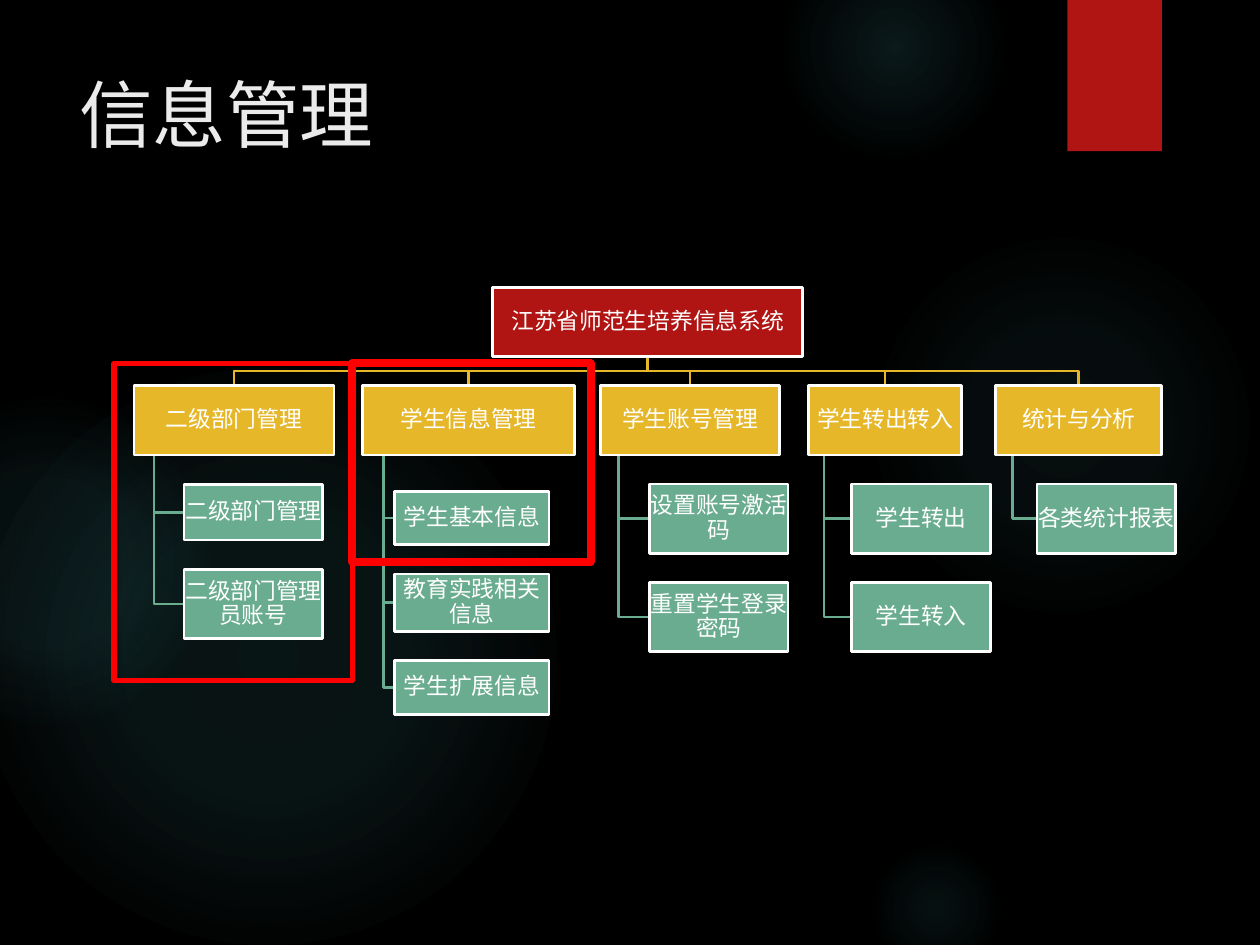
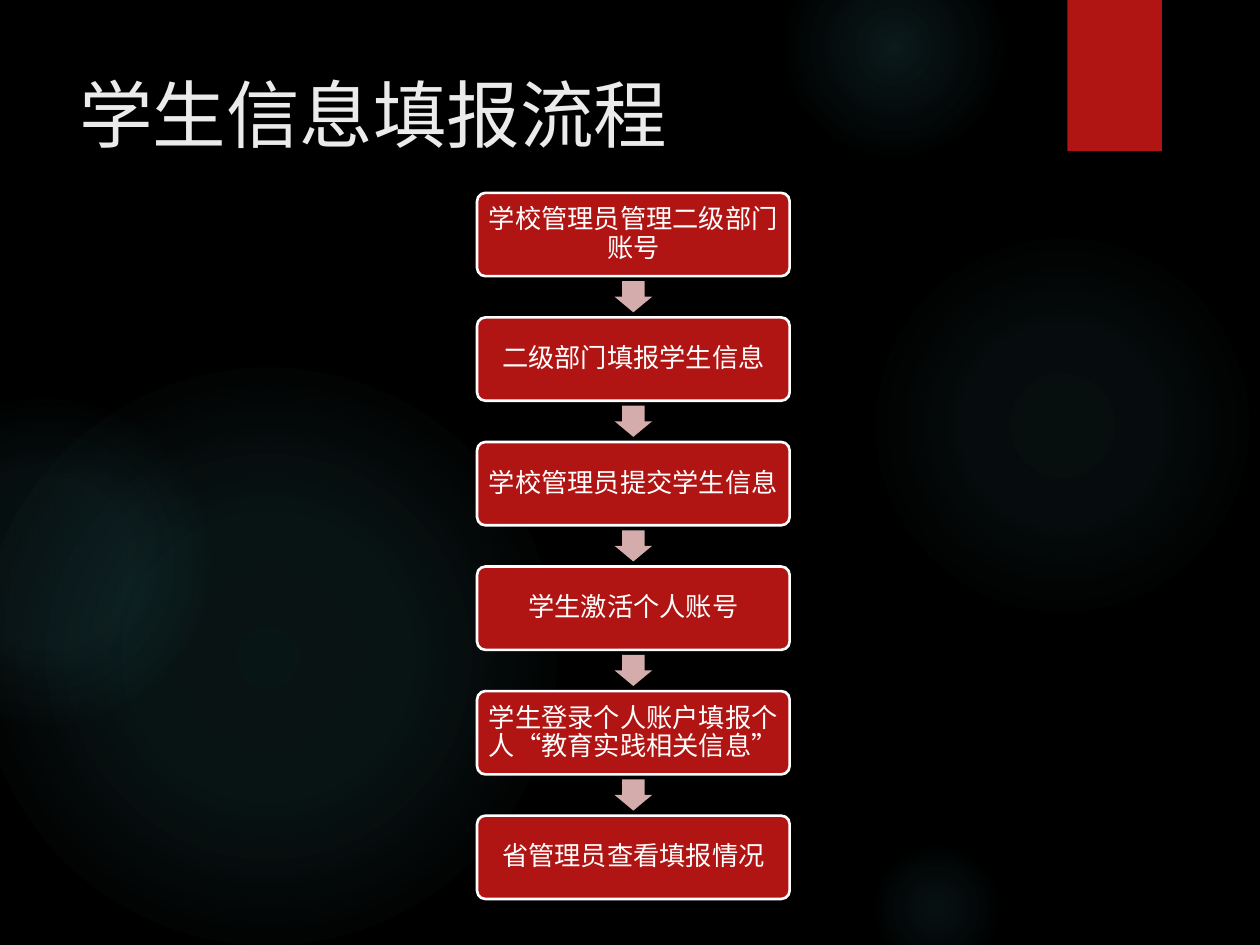
from dataclasses import dataclass

from pptx import Presentation
from pptx.dml.color import RGBColor
from pptx.enum.shapes import MSO_SHAPE as Shape
from pptx.enum.text import MSO_ANCHOR as Anchor, PP_ALIGN as Align
from pptx.oxml import parse_xml
from pptx.oxml.ns import nsdecls
from pptx.util import Pt

FONT = "League Spartan"
COLORS = {
    "black": "000000",
    "white": "FFFFFF",
    "title": "EBEBEB",
    "red": "B01513",
    "gold": "E6B729",
    "green": "6AAC90",
    "pink": "D4ACAB",
    "marker": "FF0000",
    "glow": "50B9C1",
}

# left, top, diameter, gradient stops as (position %, opacity %)
GLOWS = [
    (496, 132, 222, [(0, 7), (36, 6), (69, 0)]),
    (448, -36, 126, [(0, 14), (36, 7), (73, 0)]),
    (496, 480, 78, [(0, 9), (36, 5), (66, 0)]),
    (-12, 210, 330, [(0, 11), (36, 10), (75, 0)]),
    (-66, 228, 186, [(0, 8), (36, 8), (72, 0)]),
]

LEVEL_GAP = 16.6
BOX_HEIGHT = 39.6


@dataclass
class Branch:
    name: str
    left: float
    width: float
    indent: float
    children: list  # (name, height)
    child_width: float = 79.2
    first_gap: float = LEVEL_GAP


SYSTEM = "江苏省师范生培养信息系统"
BRANCHES = [
    Branch("二级部门管理", 0, 114.2, 28.6,
           [("二级部门管理", 31.8), ("二级部门管理员账号", BOX_HEIGHT)], first_gap=16.9),
    Branch("学生信息管理", 130.4, 121.4, 18.5,
           [("学生基本信息", 30.4), ("教育实践相关信息", 32.9), ("学生扩展信息", 30.8)],
           child_width=88.2, first_gap=20.9),
    Branch("学生账号管理", 266.5, 102.5, 28.1,
           [("设置账号激活码", BOX_HEIGHT), ("重置学生登录密码", BOX_HEIGHT)]),
    Branch("学生转出转入", 385.5, 87.3, 24.6,
           [("学生转出", BOX_HEIGHT), ("学生转入", BOX_HEIGHT)]),
    Branch("统计与分析", 492.3, 95, 23.7, [("各类统计报表", BOX_HEIGHT)]),
]

STEPS = [
    "学校管理员管理二级部门账号",
    "二级部门填报学生信息",
    "学校管理员提交学生信息",
    "学生激活个人账号",
    "学生登录个人账户填报个人“教育实践相关信息”",
    "省管理员查看填报情况",
]


def color(name):
    return RGBColor.from_string(COLORS[name])


def style_shape(shape, fill=None, line=None, weight=1.5):
    shape.shadow.inherit = False
    if fill:
        shape.fill.solid()
        shape.fill.fore_color.rgb = color(fill)
    else:
        shape.fill.background()
    if line:
        shape.line.color.rgb = color(line)
        shape.line.width = Pt(weight)
    else:
        shape.line.fill.background()


def add_preset(page, kind, box, **style):
    shape = page.shapes.add_shape(kind, *map(Pt, box))
    style_shape(shape, **style)
    return shape


def write(shape, text, size, ink, inset=None):
    """Fill the shape's text; an inset also centres it and tightens its lines."""
    frame = shape.text_frame
    frame.word_wrap = True
    frame.text = text
    para = frame.paragraphs[0]
    if inset is not None:
        frame.margin_left = frame.margin_right = Pt(inset)
        frame.margin_top = frame.margin_bottom = Pt(inset)
        frame.vertical_anchor = Anchor.MIDDLE
        para.alignment = Align.CENTER
        para.line_spacing = 0.9
    for span in para.runs:
        span.font.name = FONT
        span.font.size = Pt(size)
        span.font.color.rgb = color(ink)


def add_glow(page, left, top, diameter, stops):
    glow = add_preset(page, Shape.OVAL, (left, top, diameter, diameter))
    stop_xml = "".join(
        f'<a:gs pos="{place * 1000}"><a:srgbClr val="{COLORS["glow"]}">'
        f'<a:alpha val="{opacity * 1000}"/></a:srgbClr></a:gs>'
        for place, opacity in stops)
    gradient = parse_xml(
        f'<a:gradFill {nsdecls("a")}><a:gsLst>{stop_xml}</a:gsLst>'
        '<a:path path="circle"><a:fillToRect l="50000" t="50000" r="50000" b="50000"/>'
        '</a:path></a:gradFill>')
    properties = glow.element.spPr
    properties.replace(properties.xpath("./a:noFill")[0], gradient)
    return glow


def build_backdrop(deck, page):
    """Draw glows and ribbon on the page, then move them to the slide master."""
    master = deck.slide_master
    master.background.fill.solid()
    master.background.fill.fore_color.rgb = color("black")
    parts = [add_glow(page, *glow) for glow in GLOWS]
    parts.append(add_preset(page, Shape.RECTANGLE, (610, 0, 54, 86.4), fill="red"))
    for index, part in enumerate(parts):
        part.element.xpath("./p:nvSpPr/p:cNvPr")[0].set("id", str(100 + index))
        master.shapes.element.insert(2 + index, part.element)


def add_page(deck, title):
    page = deck.slides.add_slide(deck.slide_layouts[5])
    holder = page.shapes.title
    holder.left, holder.top, holder.width, holder.height = map(Pt, (38, 36, 556, 110))
    write(holder, title, 42, "title")
    holder.text_frame.vertical_anchor = Anchor.TOP
    holder.text_frame.paragraphs[0].alignment = Align.LEFT
    return page


def add_elbow(page, points, line):
    start, *rest = [(Pt(x), Pt(y)) for x, y in points]
    builder = page.shapes.build_freeform(*start)
    builder.add_line_segments(rest, close=False)
    style_shape(builder.convert_to_shape(), line=line)


def add_node(page, text, box, fill):
    node = add_preset(page, Shape.RECTANGLE, box, fill=fill, line="white")
    write(node, text, 13, "white", inset=0.4)


def build_branch(page, branch, left, top):
    trunk = left + branch.width / 10
    child_left = left + branch.indent
    bottom = top + BOX_HEIGHT
    child_top = bottom + branch.first_gap
    for name, height in branch.children:
        middle = child_top + height / 2
        add_elbow(page, [(trunk, bottom), (trunk, middle), (child_left, middle)], "green")
        add_node(page, name, (child_left, child_top, branch.child_width, height), "green")
        child_top += height + LEVEL_GAP
    add_node(page, branch.name, (left, top, branch.width, BOX_HEIGHT), "gold")


def build_system_chart(page, left, top):
    root_left, root_width = left + 204.8, 177.4
    root_middle = root_left + root_width / 2
    root_bottom = top + BOX_HEIGHT
    branch_top = root_bottom + LEVEL_GAP
    bus = root_bottom + LEVEL_GAP / 2
    for branch in BRANCHES:
        middle = left + branch.left + branch.width / 2
        add_elbow(page, [(root_middle, root_bottom), (root_middle, bus),
                         (middle, bus), (middle, branch_top)], "gold")
    add_node(page, SYSTEM, (root_left, top, root_width, BOX_HEIGHT), "red")
    for branch in BRANCHES:
        build_branch(page, branch, left + branch.left, branch_top)


def build_markers(page, left, top):
    width = 136.2
    add_preset(page, Shape.RECTANGLE, (left, top, width, 181.4), line="marker", weight=3)
    add_preset(page, Shape.RECTANGLE, (left + width, top, width, 113.4),
               line="marker", weight=4.5)


def build_flow(page, left, top, width, height):
    step_height = 47.6
    pitch = (height - step_height) / (len(STEPS) - 1)
    arrow_width, arrow_height = 21.4, 17.8
    for index, text in enumerate(STEPS):
        step_top = top + index * pitch
        step = add_preset(page, Shape.ROUNDED_RECTANGLE,
                          (left, step_top, width, step_height), fill="red", line="white")
        step.adjustments[0] = 0.1
        write(step, text, 15, "white", inset=4.2)
        if index:
            gap_middle = step_top - (pitch - step_height) / 2
            arrow = add_preset(page, Shape.DOWN_ARROW,
                               (left + (width - arrow_width) / 2,
                                gap_middle - arrow_height / 2,
                                arrow_width, arrow_height), fill="pink")
            arrow.adjustments[0] = 0.6
            arrow.adjustments[1] = 0.5


def main():
    deck = Presentation()
    deck.slide_width, deck.slide_height = Pt(720), Pt(540)

    system_page = add_page(deck, "信息管理")
    build_backdrop(deck, system_page)
    build_system_chart(system_page, 76.6, 164.2)
    build_markers(system_page, 65.1, 207.6)

    flow_page = add_page(deck, "学生信息填报流程")
    build_flow(flow_page, 272.6, 110.2, 178.6, 403.5)

    deck.save("out.pptx")


if __name__ == "__main__":
    main()
